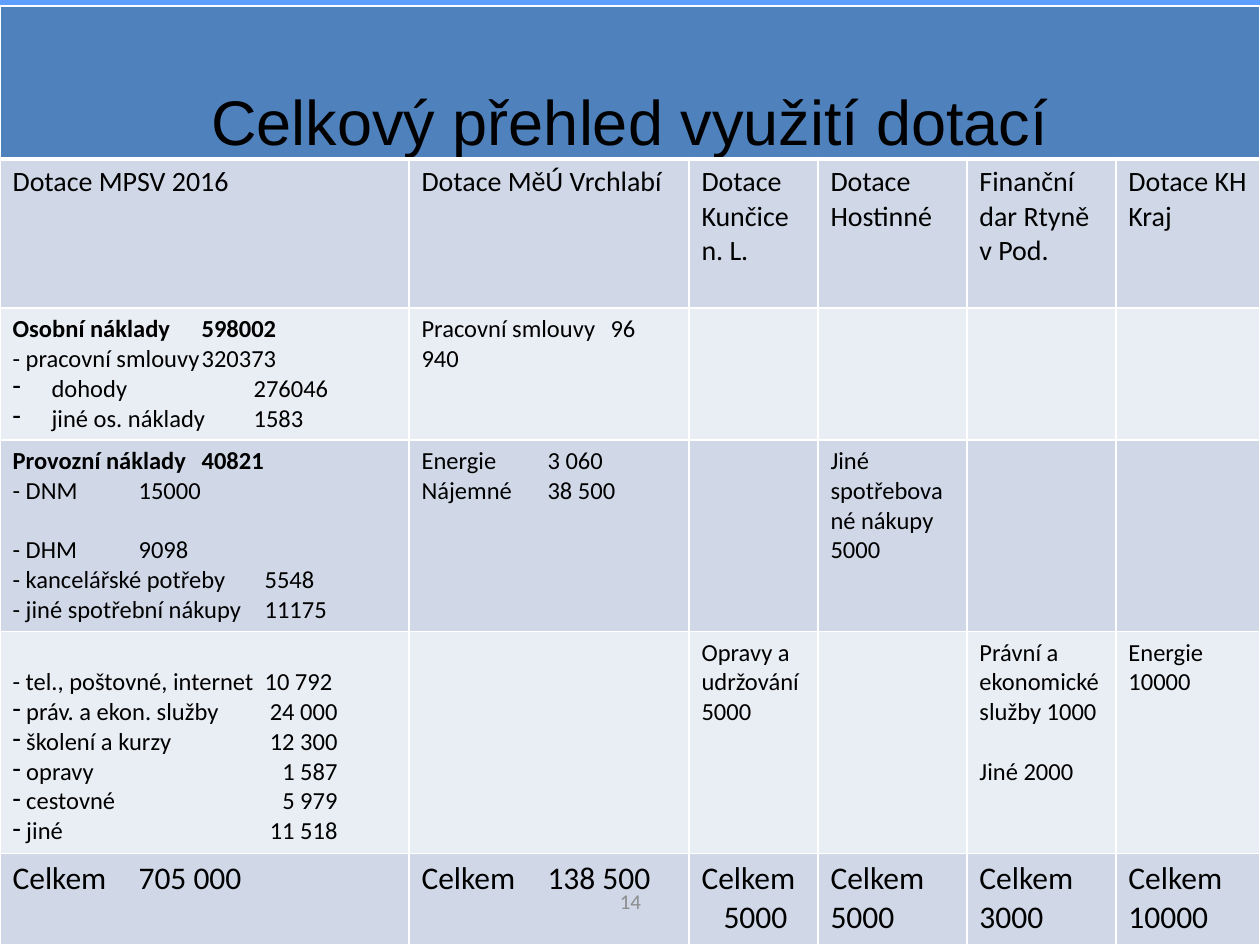
from collections import namedtuple

from lxml.etree import SubElement
from pptx import Presentation
from pptx.dml.color import RGBColor
from pptx.enum.text import MSO_ANCHOR, PP_ALIGN
from pptx.oxml import parse_xml
from pptx.oxml.ns import nsdecls, qn
from pptx.util import Emu, Pt

BLACK = RGBColor(0x00, 0x00, 0x00)
GREY = RGBColor(0x8C, 0x8C, 0x8C)
WHITE = RGBColor(0xFF, 0xFF, 0xFF)
TITLE_BLUE = RGBColor(0x4F, 0x81, 0xBD)
BAND_DARK = RGBColor(0xD0, 0xD8, 0xE8)
BAND_LIGHT = RGBColor(0xE9, 0xED, 0xF4)
SKY_STOPS = [
    (0, RGBColor(0x5E, 0x9E, 0xFF)),
    (40, RGBColor(0x85, 0xC2, 0xFF)),
    (70, RGBColor(0xC4, 0xD6, 0xEB)),
    (100, RGBColor(0xFF, 0xEB, 0xFA)),
]

Line = namedtuple("Line", "text bold bullet gap indent hang", defaults=(False, False, 0, 0, 0))
Tab = namedtuple("Tab", "position align")

TITLE = "Celkový přehled využití dotací"
COLUMN_WIDTHS = [409, 280, 129, 149, 149, 144]
ROW_HEIGHTS = [153, 149, 132, 191, 222, 91]
ROW_SIZES = [16, 14, 14, 14, 18]
LINE_GAP = 17
TALL_MARGIN = 36

GRANTS = [
    ["Dotace MPSV 2016"], ["Dotace MěÚ Vrchlabí"], ["Dotace Kunčice n. L."],
    ["Dotace Hostinné"], ["Finanční dar Rtyně v Pod."], ["Dotace KH Kraj"],
]
STAFF_COSTS = [
    [
        Line("Osobní náklady\t598002", bold=True),
        "- pracovní smlouvy\t320373",
        Line("dohody\t276046", bullet=True, indent=39, hang=39),
        Line("jiné os. náklady\t1583", bullet=True, indent=39, hang=39),
    ],
    ["Pracovní smlouvy\t96 940"], [], [], [], [],
]
OPERATING_COSTS = [
    [
        Line("Provozní náklady\t40821", bold=True),
        "- DNM\t15000",
        Line("- DHM\t9098", gap=LINE_GAP),
        "- kancelářské potřeby\t5548",
        "- jiné spotřební nákupy\t11175",
    ],
    ["Energie\t3 060", "Nájemné\t38 500"],
    [], ["Jiné spotřebované nákupy", "5000"], [], [],
]
SERVICES = [
    [
        "- tel., poštovné, internet\t10 792",
        Line(" práv. a ekon. služby\t24 000", bullet=True),
        Line(" školení a kurzy\t12 300", bullet=True),
        Line(" opravy\t1 587", bullet=True),
        Line(" cestovné\t5 979", bullet=True),
        Line(" jiné\t11 518", bullet=True),
    ],
    [], ["Opravy a udržování", "5000"], [],
    ["Právní a ekonomické služby 1000", Line("Jiné 2000", gap=LINE_GAP)],
    ["Energie", "10000"],
]
TOTALS = [
    ["Celkem\t705 000"], ["Celkem\t138 500"],
    [Line("Celkem 5000", indent=22, hang=22)],
    ["Celkem 5000"], ["Celkem 3000"], ["Celkem 10000"],
]
BODY = [GRANTS, STAFF_COSTS, OPERATING_COSTS, SERVICES, TOTALS]
AMOUNT_TABS = {
    (1, 0): Tab(241, "l"), (1, 1): Tab(185, "l"),
    (2, 0): Tab(241, "l"), (2, 1): Tab(185, "l"),
    (3, 0): Tab(325, "r"),
    (4, 0): Tab(222, "l"), (4, 1): Tab(137, "l"),
}


def px(length):
    """Turn pixels at 126 to the inch into EMU."""
    return Emu(round(length * 914400 / 126))


class SlideBuilder:
    """Holds the text style and the current slide."""

    def __init__(self, presentation, font="Calibri"):
        self.font = font
        self.slide = presentation.slides.add_slide(presentation.slide_layouts[6])

    def background(self, stops):
        """Fill the background with a gradient running downwards."""
        fill = self.slide.background.fill
        fill.gradient()
        fill.gradient_angle = 270
        stop_list = self.slide.element.find(".//" + qn("a:gsLst"))
        for stop in list(stop_list):
            stop_list.remove(stop)
        for percent, color in stops:
            stop = SubElement(stop_list, qn("a:gs"), pos=str(percent * 1000))
            SubElement(stop, qn("a:srgbClr"), val=str(color))

    def style(self, paragraph, size, color=BLACK, font=None, bold=False):
        """Set the font of a whole paragraph."""
        paragraph.font.name = font or self.font
        paragraph.font.size = Pt(size)
        paragraph.font.bold = bold
        paragraph.font.color.rgb = color

    def lines(self, frame, lines, size, tab=None):
        """Write lines with their bullets, indents and amount tab."""
        for index, entry in enumerate(lines):
            line = Line(entry) if isinstance(entry, str) else entry
            paragraph = frame.paragraphs[0] if index == 0 else frame.add_paragraph()
            paragraph.add_run().text = line.text
            properties = paragraph._p.get_or_add_pPr()
            properties.set("marL", str(px(line.indent)))
            properties.set("indent", str(-px(line.hang)))
            if line.bullet:
                SubElement(properties, qn("a:buChar"), char="-")
            if tab and "\t" in line.text:
                tabs = SubElement(properties, qn("a:tabLst"))
                SubElement(tabs, qn("a:tab"), pos=str(px(tab.position)), algn=tab.align)
            if line.gap:
                paragraph.space_before = Pt(line.gap)
            self.style(paragraph, size, bold=line.bold)

    def cell_look(self, cell, color, top=1, bottom=1):
        """Fill a cell and draw its white borders."""
        cell.fill.solid()
        cell.fill.fore_color.rgb = color
        properties = cell._tc.get_or_add_tcPr()
        for index, (side, width) in enumerate(zip("LRTB", (1, 1, top, bottom))):
            properties.insert(index, parse_xml(
                f'<a:ln{side} {nsdecls("a")} w="{Pt(width)}"><a:solidFill>'
                f'<a:srgbClr val="{WHITE}"/></a:solidFill></a:ln{side}>'))

    def title_row(self, table, title):
        """Merge the first row into one title cell."""
        for cell in table.rows[0].cells:
            self.cell_look(cell, TITLE_BLUE, bottom=3)
        heading = table.cell(0, 0)
        heading.merge(table.cell(0, len(table.columns) - 1))
        heading.vertical_anchor = MSO_ANCHOR.BOTTOM
        heading.margin_left = heading.margin_right = heading.margin_top = px(1)
        heading.margin_bottom = 0
        paragraph = heading.text_frame.paragraphs[0]
        paragraph.add_run().text = title
        paragraph.alignment = PP_ALIGN.CENTER
        self.style(paragraph, 36, font="Arial")

    def grant_table(self, left, top):
        """Build the table of grants and costs."""
        table = self.slide.shapes.add_table(
            len(ROW_HEIGHTS), len(COLUMN_WIDTHS), px(left), px(top),
            px(sum(COLUMN_WIDTHS)), px(sum(ROW_HEIGHTS))).table
        for column, width in zip(table.columns, COLUMN_WIDTHS):
            column.width = px(width)
        for row, height in zip(table.rows, ROW_HEIGHTS):
            row.height = px(height)
        self.title_row(table, TITLE)
        for r, (row, size) in enumerate(zip(BODY, ROW_SIZES)):
            for c, lines in enumerate(row):
                cell = table.cell(r + 1, c)
                self.cell_look(cell, BAND_LIGHT if r % 2 else BAND_DARK, top=1 if r else 3)
                self.lines(cell.text_frame, lines, size, AMOUNT_TABS.get((r, c)))
        table.cell(BODY.index(SERVICES) + 1, 0).margin_top = px(TALL_MARGIN)

    def page_number(self, left, top, width, height, number):
        """Write the centred page number."""
        frame = self.slide.shapes.add_textbox(
            px(left), px(top), px(width), px(height)).text_frame
        frame.word_wrap = True
        frame.vertical_anchor = MSO_ANCHOR.MIDDLE
        paragraph = frame.paragraphs[0]
        paragraph.add_run().text = number
        paragraph.alignment = PP_ALIGN.CENTER
        self.style(paragraph, 12, GREY)


def main():
    """Build and save the grant overview."""
    presentation = Presentation()
    presentation.slide_width, presentation.slide_height = px(1260), px(945)
    builder = SlideBuilder(presentation)
    builder.background(SKY_STOPS)
    builder.grant_table(0, 6)
    builder.page_number(431, 876, 399, 50, "14")
    presentation.save("out.pptx")


if __name__ == "__main__":
    main()
